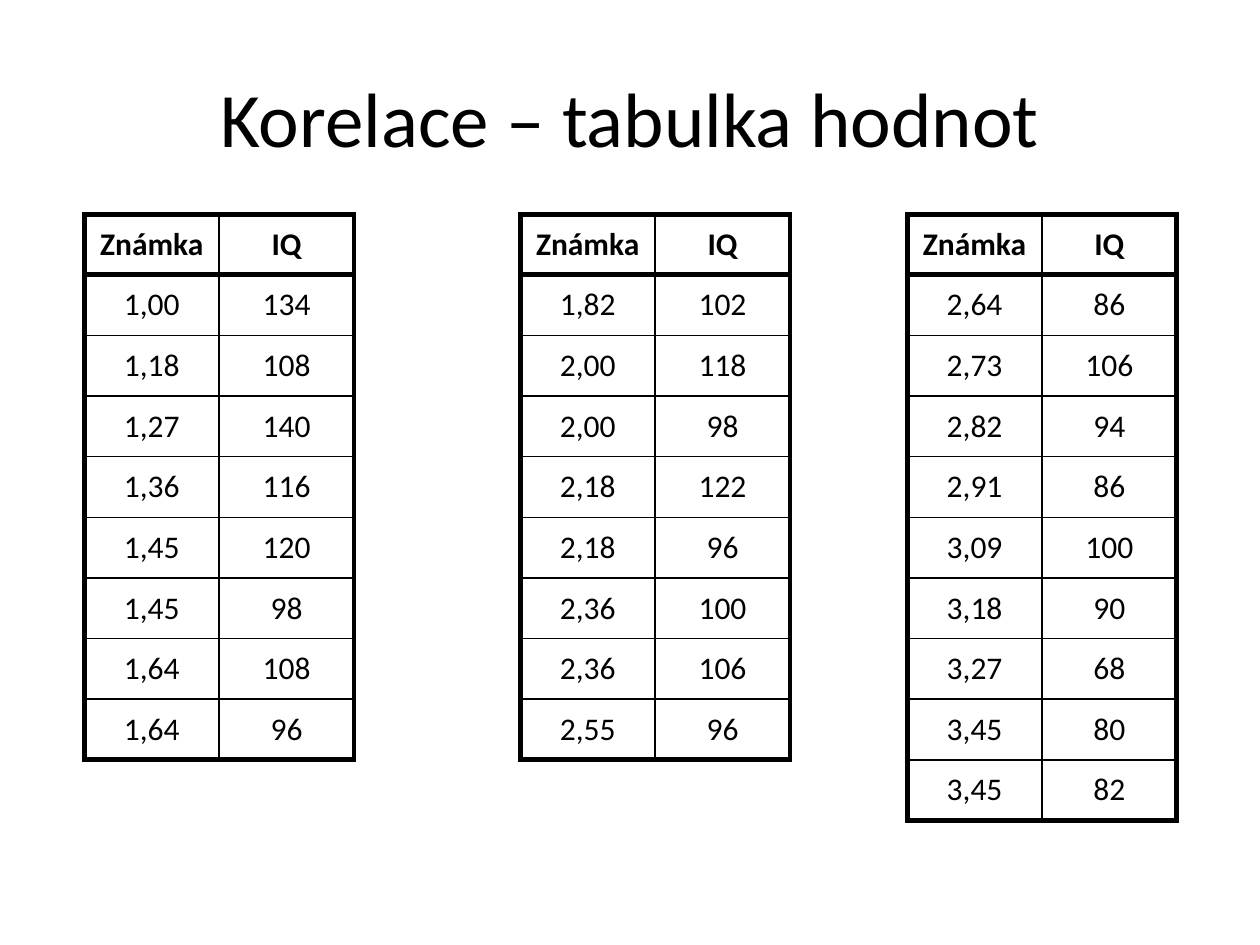
from lxml import etree
from pptx import Presentation
from pptx.dml.color import RGBColor
from pptx.enum.text import MSO_ANCHOR, PP_ALIGN
from pptx.oxml.ns import qn
from pptx.util import Inches, Pt

CENTER = PP_ALIGN.CENTER
MIDDLE = MSO_ANCHOR.MIDDLE
FONT = "Calibri"
BLACK = "000000"
THIN, THICK = 1, 3
TABLE_TOP = 1.7
COL_WIDTH = 1.07
ROW_HEIGHT = 4.33 / 9
HEADER = ("Známka", "IQ")
TABLES = [
    (0.67, [("1,00", 134), ("1,18", 108), ("1,27", 140), ("1,36", 116),
            ("1,45", 120), ("1,45", 98), ("1,64", 108), ("1,64", 96)]),
    (4.13, [("1,82", 102), ("2,00", 118), ("2,00", 98), ("2,18", 122),
            ("2,18", 96), ("2,36", 100), ("2,36", 106), ("2,55", 96)]),
    (7.2, [("2,64", 86), ("2,73", 106), ("2,82", 94), ("2,91", 86),
           ("3,09", 100), ("3,18", 90), ("3,27", 68), ("3,45", 80),
           ("3,45", 82)]),
]


def rgb(color):
    """Return the colour for a hex string."""
    return RGBColor.from_string(color)


def write(tf, text, size=18, bold=False, color=BLACK, align=CENTER):
    """Write one formatted paragraph into a text frame."""
    p = tf.paragraphs[0]
    p.alignment = align
    r = p.add_run()
    r.text = text
    r.font.name = FONT
    r.font.size = Pt(size)
    r.font.bold = bold
    r.font.color.rgb = rgb(color)


def set_border(cell, side, width, color=BLACK):
    """Draw one solid border of a cell; side is L, R, T or B."""
    tcPr = cell._tc.get_or_add_tcPr()
    ln = etree.SubElement(tcPr, qn(f"a:ln{side}"), w=str(Pt(width)))
    fill = etree.SubElement(ln, qn("a:solidFill"))
    etree.SubElement(fill, qn("a:srgbClr"), val=color)


def add_title(slide, text):
    """Place and fill the title placeholder."""
    sp = slide.shapes.title
    sp.left, sp.top = Inches(0.5), Inches(0.3)
    sp.width, sp.height = Inches(9), Inches(1.25)
    sp.text_frame.vertical_anchor = MIDDLE
    write(sp.text_frame, text, size=44)


def add_value_table(slide, left, values):
    """Add a table with a thick frame, a thick header rule and thin inner lines."""
    rows = [HEADER, *values]
    last_row, last_col = len(rows) - 1, len(HEADER) - 1
    table = slide.shapes.add_table(
        len(rows), len(HEADER), Inches(left), Inches(TABLE_TOP),
        Inches(COL_WIDTH * len(HEADER)), Inches(ROW_HEIGHT * len(rows))).table
    table.first_row = table.horz_banding = False
    for i, row in enumerate(rows):
        for j, value in enumerate(row):
            cell = table.cell(i, j)
            cell.vertical_anchor = MIDDLE
            write(cell.text_frame, str(value), bold=i == 0)
            thick = {"L": j == 0, "R": j == last_col,
                     "T": i <= 1, "B": i in (0, last_row)}
            for side, is_thick in thick.items():
                set_border(cell, side, THICK if is_thick else THIN)
            cell.fill.background()


def main():
    """Build the slide and save it."""
    prs = Presentation()
    prs.slide_width, prs.slide_height = Inches(10), Inches(7.5)
    slide = prs.slides.add_slide(prs.slide_layouts[5])
    add_title(slide, "Korelace – tabulka hodnot")
    for left, values in TABLES:
        add_value_table(slide, left, values)
    prs.save("out.pptx")


if __name__ == "__main__":
    main()
